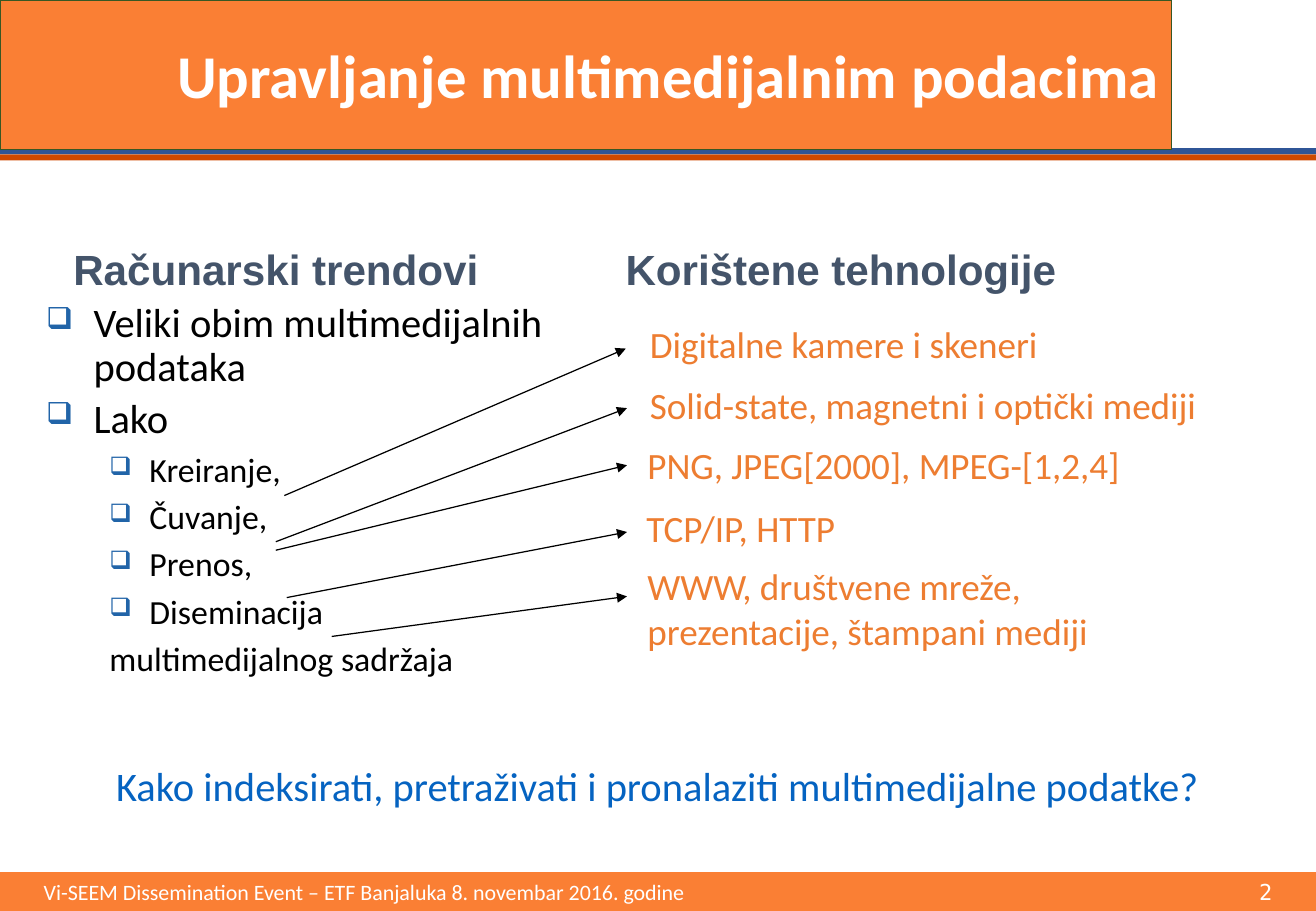
from pptx import Presentation
from pptx.dml.color import RGBColor
from pptx.enum.shapes import MSO_CONNECTOR, MSO_SHAPE
from pptx.enum.text import MSO_ANCHOR, PP_ALIGN
from pptx.oxml.ns import qn
from pptx.util import Inches, Pt
from lxml.etree import SubElement

COLORS = {
    "orange": "FA7F34", "rust": "CF4901", "blue": "2F5597", "green": "385723",
    "white": "FFFFFF", "black": "000000", "slate": "44546A",
    "technology": "ED7D31", "question": "0563C1", "bullet": "2164A8",
}
FOOTER = "Vi-SEEM Dissemination Event – ETF Banjaluka 8. novembar 2016. godine"

# Text, level, has bullet
TRENDS = [
    ("Veliki obim multimedijalnih podataka", 0, True),
    ("Lako", 0, True),
    ("Kreiranje,", 1, True),
    ("Čuvanje,", 1, True),
    ("Prenos,", 1, True),
    ("Diseminacija", 1, True),
    ("multimedijalnog sadržaja", 1, False),
]
# Size, left margin, hanging indent, space before, line spacing by level
LEVELS = [(24, 0.39, 0.39, 5, 0.9), (20, 0.85, 0.33, 4, 1.0)]

# Text, text box, arrow start, arrow end
TECHNOLOGIES = [
    ("Digitalne kamere i skeneri",
     (5.25, 2.6, 3.43, 0.43), (2.34, 4.08), (5.15, 2.87)),
    ("Solid-state, magnetni i optički mediji",
     (5.25, 3.1, 4.75, 0.47), (2.27, 4.46), (5.16, 3.36)),
    ("PNG, JPEG[2000], MPEG-[1,2,4]",
     (5.23, 3.59, 4.3, 0.47), (2.27, 4.53), (5.16, 3.83)),
    ("TCP/IP, HTTP",
     (5.22, 4.11, 1.78, 0.47), (2.36, 4.92), (5.16, 4.38)),
    ("WWW, društvene mreže, prezentacije, štampani mediji",
     (5.23, 4.59, 3.86, 0.84), (2.73, 5.24), (5.16, 4.91)),
]


def rgb(name):
    return RGBColor.from_string(COLORS[name])


def set_font(font, size, color, name="Calibri", bold=False):
    font.size = Pt(size)
    font.name = name
    font.bold = bold
    font.color.rgb = rgb(color)


def add_bar(s, box, fill, line=None):
    sp = s.shapes.add_shape(MSO_SHAPE.RECTANGLE, *map(Inches, box))
    sp.shadow.inherit = False
    sp.fill.solid()
    sp.fill.fore_color.rgb = rgb(fill)
    if line:
        sp.line.color.rgb = rgb(line)
        sp.line.width = Pt(0.75)
    else:
        sp.line.fill.background()
    return sp


def add_text(s, box, text, size, color, name="Calibri", bold=False,
             align=PP_ALIGN.LEFT):
    tf = s.shapes.add_textbox(*map(Inches, box)).text_frame
    tf.word_wrap = True
    p = tf.paragraphs[0]
    p.text = text
    p.alignment = align
    set_font(p.runs[0].font, size, color, name, bold)


def add_title(s, text):
    tf = add_bar(s, (0, 0, 9.64, 1.23), "orange", "green").text_frame
    tf.vertical_anchor = MSO_ANCHOR.MIDDLE
    p = tf.paragraphs[0]
    p.text = text
    p.alignment = PP_ALIGN.RIGHT
    set_font(p.runs[0].font, 36, "white", bold=True)


def add_footer(s, text, number):
    tf = add_bar(s, (0, 7.18, 10.83, 0.32), "orange").text_frame
    tf.vertical_anchor = MSO_ANCHOR.TOP
    tf.margin_left = Inches(0.36)
    p = tf.paragraphs[0]
    p.alignment = PP_ALIGN.LEFT
    # Right tab for the page number
    tabs = SubElement(p._p.get_or_add_pPr(), qn("a:tabLst"))
    SubElement(tabs, qn("a:tab"), pos=str(Inches(10.11)), algn="r")
    for part, name in ((text + "\t", "Calibri"), (number, "DejaVu Sans Mono")):
        r = p.add_run()
        r.text = part
        set_font(r.font, 13, "white", name)


def add_bullet(pPr):
    color = SubElement(pPr, qn("a:buClr"))
    SubElement(color, qn("a:srgbClr"), val=COLORS["bullet"])
    SubElement(pPr, qn("a:buSzPct"), val="75000")
    SubElement(pPr, qn("a:buChar"), char="❑")


def add_trends(s, box, items):
    tf = s.shapes.add_textbox(*map(Inches, box)).text_frame
    tf.word_wrap = True
    tf.margin_left = tf.margin_top = tf.margin_right = tf.margin_bottom = 0
    for i, (text, level, bulleted) in enumerate(items):
        size, margin, hanging, before, spacing = LEVELS[level]
        p = tf.add_paragraph() if i else tf.paragraphs[0]
        p.text = text
        p.level = level
        p.line_spacing = spacing
        if i:
            p.space_before = Pt(before)
        pPr = p._p.get_or_add_pPr()
        pPr.set("marL", str(Inches(margin)))
        pPr.set("indent", str(-Inches(hanging)))
        if bulleted:
            add_bullet(pPr)
        set_font(p.runs[0].font, size, "black")


def add_arrow(s, start, end):
    line = s.shapes.add_connector(MSO_CONNECTOR.STRAIGHT,
                                  *map(Inches, start + end))
    line.line.color.rgb = rgb("black")
    line.line.width = Pt(0.75)
    SubElement(line.line._get_or_add_ln(), qn("a:tailEnd"), type="triangle")
    SubElement(line._element.spPr, qn("a:effectLst"))


def main():
    prs = Presentation()
    prs.slide_width, prs.slide_height = Inches(10.83), Inches(7.5)
    s = prs.slides.add_slide(prs.slide_layouts[6])

    # Header and footer
    add_bar(s, (0, 1.27, 10.83, 0.05), "rust")
    add_bar(s, (0, 1.22, 10.83, 0.05), "blue")
    add_title(s, "Upravljanje multimedijalnim podacima")
    add_footer(s, FOOTER, "2")

    # Column headings
    for text, box in (("Računarski trendovi", (0.23, 1.95, 4.08, 0.51)),
                      ("Korištene tehnologije", (4.99, 1.95, 3.86, 0.51))):
        add_text(s, box, text, 25, "slate", "Arial", True, PP_ALIGN.CENTER)

    # Trends and the technologies they lead to
    add_trends(s, (0.38, 2.49, 4.41, 3.63), TRENDS)
    for text, box, start, end in TECHNOLOGIES:
        add_arrow(s, start, end)
        add_text(s, box, text, 22, "technology")

    # Closing question
    add_text(s, (0.82, 6.22, 9.18, 0.5),
             "Kako indeksirati, pretraživati i pronalaziti multimedijalne podatke?",
             24, "question", align=PP_ALIGN.CENTER)
    prs.save("out.pptx")


if __name__ == "__main__":
    main()
